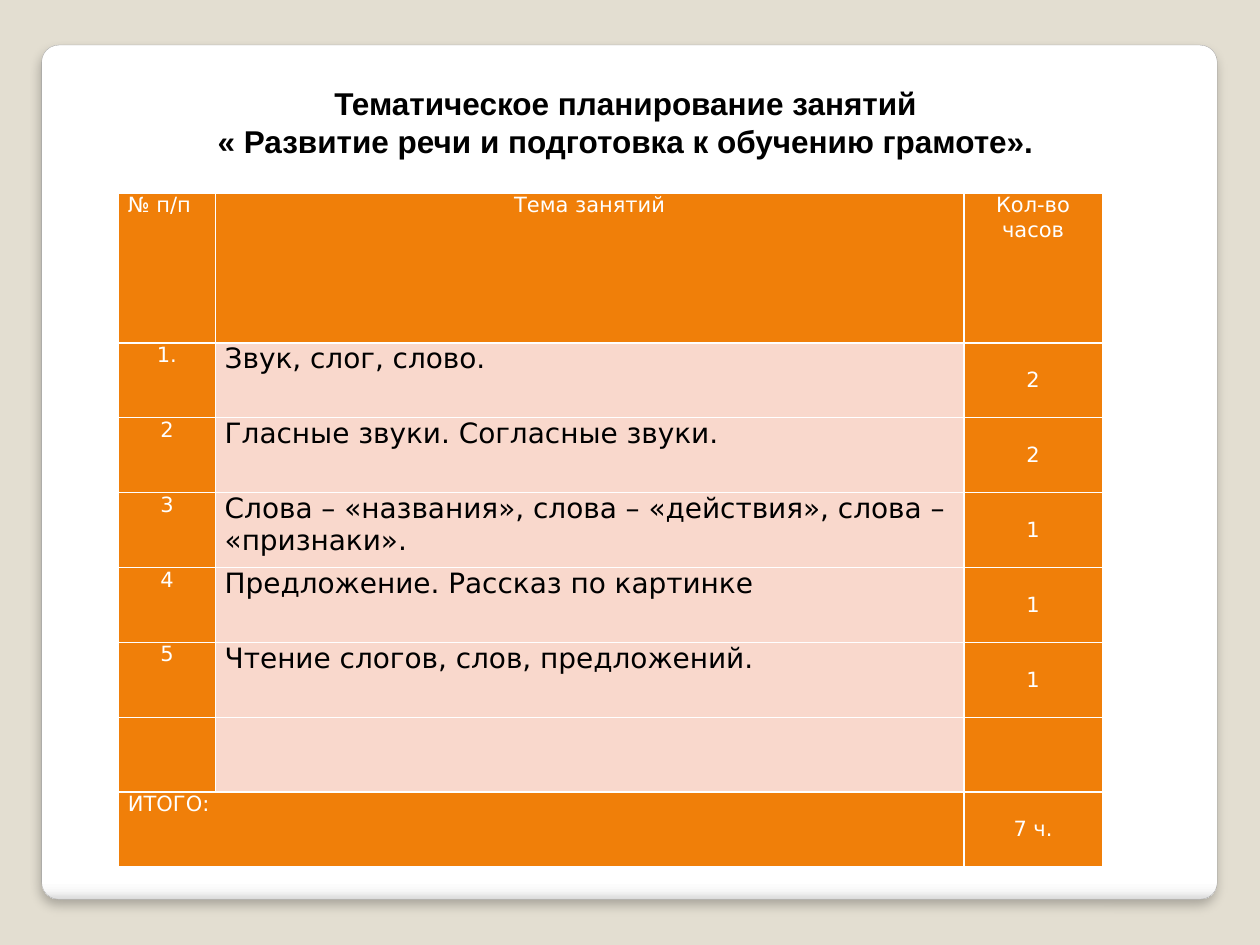
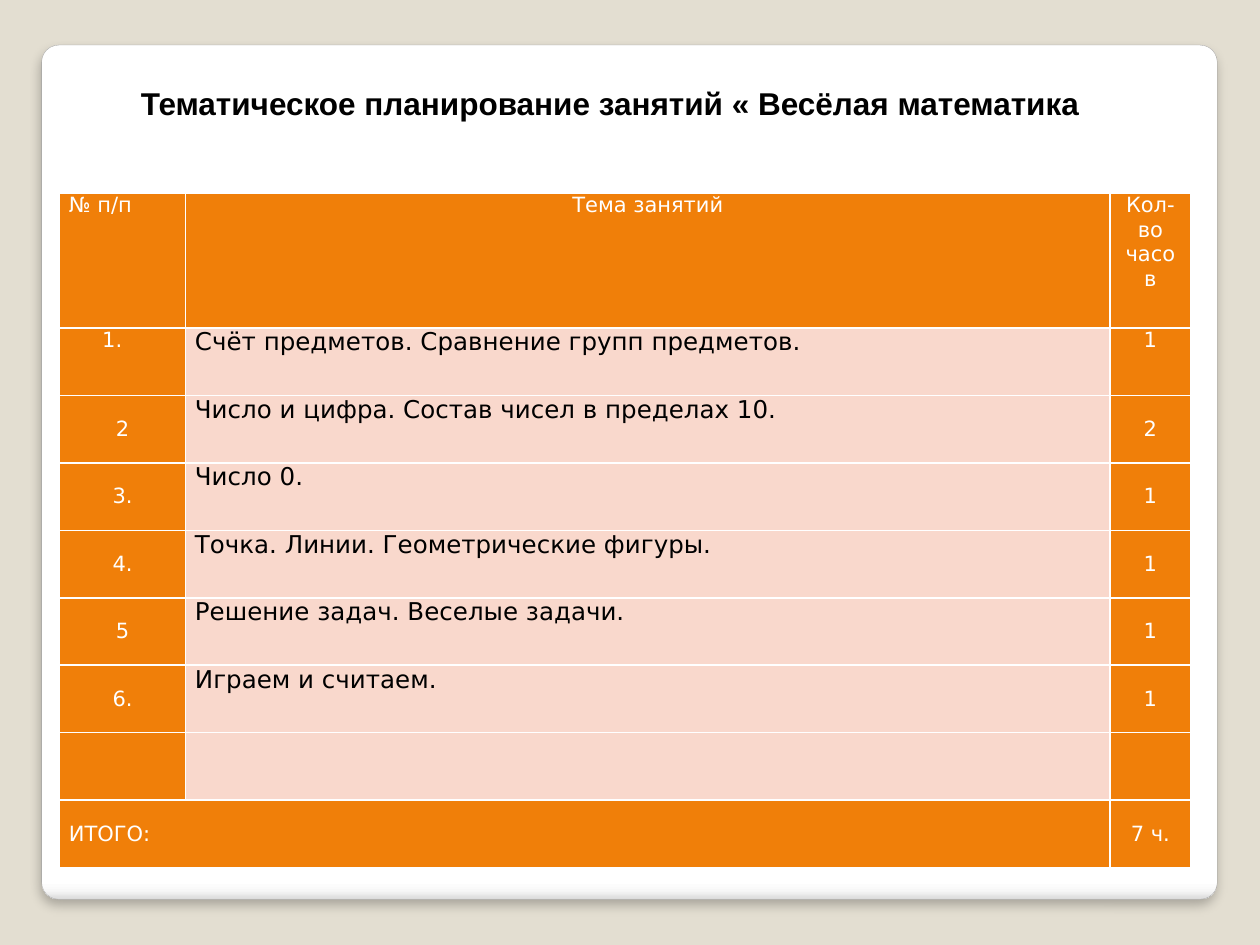
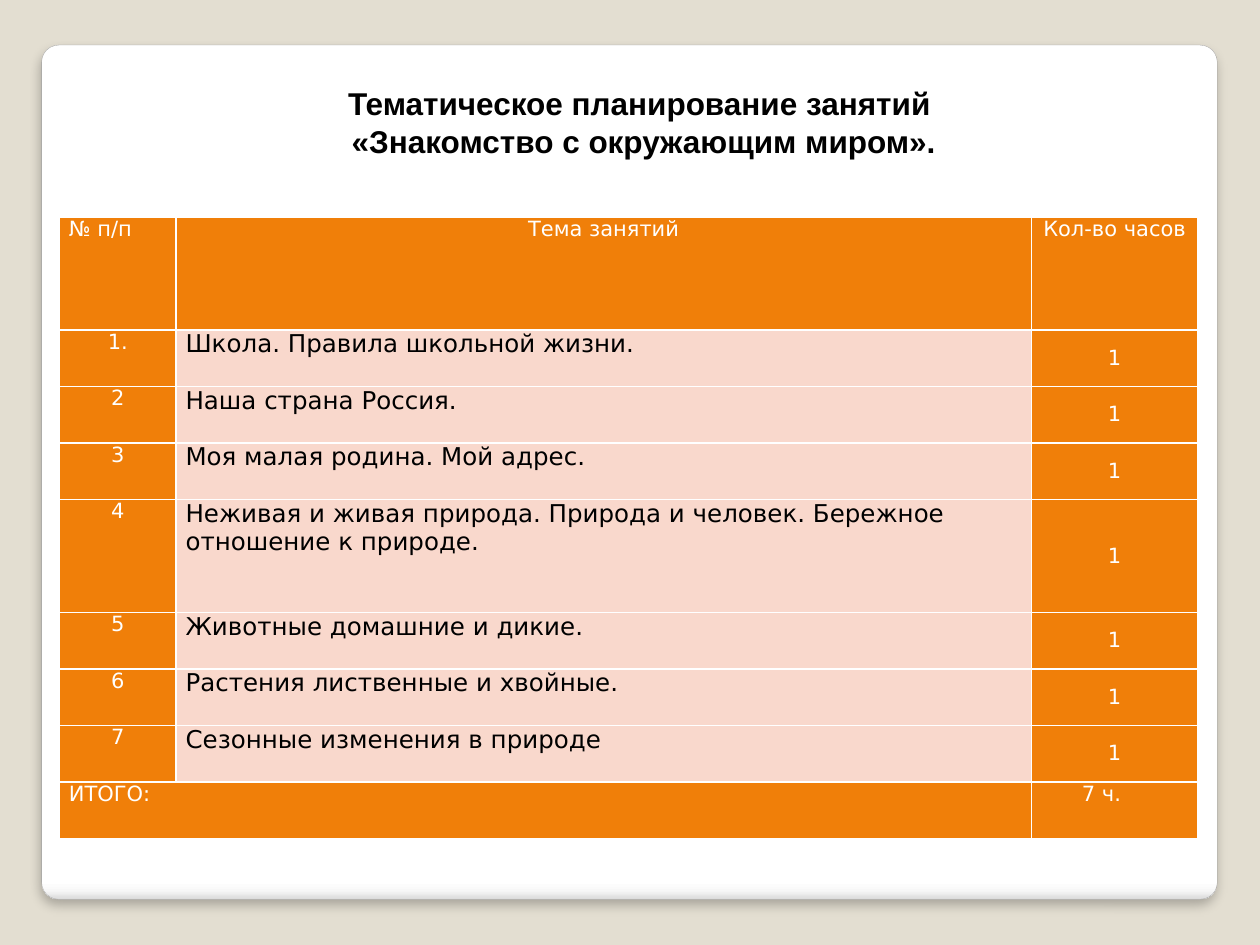
import pptx
import pptx.util
import pptx.dml.color
import pptx.enum.shapes
import pptx.enum.text
import pptx.oxml
import pptx.oxml.ns
from dataclasses import dataclass
from lxml import etree

Cm = pptx.util.Cm
ALIGN = pptx.enum.text.PP_ALIGN
ANCHOR = pptx.enum.text.MSO_ANCHOR
NAMESPACE = pptx.oxml.ns.nsdecls("a")


@dataclass(frozen=True)
class Theme:
    background: str = "E3DED1"
    accent: str = "F07F09"
    tint: str = "F9D8CC"
    light: str = "FFFFFF"
    dark: str = "000000"
    outline: str = "A4A4A4"
    panel_stops: tuple = ((0, "FFFFFF"), (98, "FFFFFF"), (99, "F7F7F7"), (100, "DADADA"))
    title_font: str = "Arial"
    table_font: str = "DejaVu Sans"
    title_size: int = 18
    label_size: int = 12


theme = Theme()


def rgb(code):
    return pptx.dml.color.RGBColor.from_string(code)


def add_run(paragraph, text, font_name, size, color, bold=False):
    run = paragraph.add_run()
    run.text = text
    run.font.name = font_name
    run.font.size = pptx.util.Pt(size)
    run.font.bold = bold
    run.font.color.rgb = rgb(color)


header = ("№ п/п", "Тема занятий", "Кол-во часов")
total = ("ИТОГО:", "", "7 ч.")
empty = ("", "", "")

plans = [
    dict(
        title=["Тематическое планирование занятий ", "« Развитие речи и подготовка к обучению грамоте». "],
        title_box=(1.98, 21.44, 1.8), title_align=ALIGN.CENTER,
        table_origin=(2.39, 3.89), columns=(1.95, 15.09, 2.79),
        row_height=1.51, double_rows={0}, topic_size=16,
        anchors="ttm", row_anchors={}, indents={},
        lessons=[
            ("1.", "Звук, слог, слово.", "2"),
            ("2", "Гласные звуки. Согласные звуки.", "2"),
            ("3", "Слова – «названия», слова – «действия», слова – «признаки».", "1"),
            ("4", "Предложение. Рассказ по картинке", "1"),
            ("5", "Чтение слогов, слов, предложений.", "1"),
            empty,
        ],
    ),
    dict(
        title=["Тематическое планирование занятий « Весёлая математика"],
        title_box=(2.59, 20.83, 1.02), title_align=ALIGN.LEFT,
        table_origin=(1.2, 3.89), columns=(2.54, 18.64, 1.62),
        row_height=1.36, double_rows={0}, topic_size=14,
        anchors="mtm", row_anchors={1: "ttt"}, indents={(1, 0): 0.67},
        lessons=[
            ("1.", "Счёт предметов. Сравнение групп предметов.", "1"),
            ("2", "Число и цифра. Состав чисел в пределах 10.", "2"),
            ("3.", "Число 0.", "1"),
            ("4.", "Точка. Линии. Геометрические фигуры.", "1"),
            ("5", "Решение задач. Веселые задачи.", "1"),
            ("6.", "Играем и считаем.", "1"),
            empty,
        ],
    ),
    dict(
        title=[" Тематическое планирование занятий ", " «Знакомство с окружающим миром»."],
        title_box=(1.98, 21.82, 1.8), title_align=ALIGN.CENTER,
        table_origin=(1.2, 4.37), columns=(2.35, 17.24, 3.36),
        row_height=1.14, double_rows={0, 4}, topic_size=14,
        anchors="ttm", row_anchors={8: "ttt"}, indents={(8, 2): 0.83},
        lessons=[
            ("1.", "Школа. Правила школьной жизни.", "1"),
            ("2", "Наша страна Россия.", "1"),
            ("3", "Моя малая родина. Мой адрес.", "1"),
            ("4", "Неживая и живая природа. Природа и человек. Бережное отношение к природе.", "1"),
            ("5", "Животные домашние и дикие.", "1"),
            ("6", "Растения лиственные и хвойные.", "1"),
            ("7", "Сезонные изменения в природе", "1"),
        ],
    ),
]

presentation = pptx.Presentation()
presentation.slide_width = Cm(25.4)
presentation.slide_height = Cm(19.05)
background = presentation.slide_master.background.fill
background.solid()
background.fore_color.rgb = rgb(theme.background)

for plan in plans:
    slide = presentation.slides.add_slide(presentation.slide_layouts[6])

    panel = slide.shapes.add_shape(
        pptx.enum.shapes.MSO_SHAPE.ROUNDED_RECTANGLE, Cm(0.84), Cm(0.91), Cm(23.7), Cm(17.22))
    panel.adjustments[0] = 0.02
    panel.line.color.rgb = rgb(theme.outline)
    panel.line.width = pptx.util.Pt(0.16)
    panel.fill.gradient()
    panel.fill.gradient_angle = 270
    properties = panel.element.spPr
    stops = properties.find(".//" + pptx.oxml.ns.qn("a:gsLst"))
    stops.clear()
    for position, color in theme.panel_stops:
        stop = etree.SubElement(stops, pptx.oxml.ns.qn("a:gs"), pos=str(position * 1000))
        etree.SubElement(stop, pptx.oxml.ns.qn("a:srgbClr"), val=color)
    panel.shadow.inherit = False
    properties.find(pptx.oxml.ns.qn("a:effectLst")).append(pptx.oxml.parse_xml(
        f'<a:outerShdw {NAMESPACE} blurRad="76200" dist="50800" dir="5400000" algn="tl" rotWithShape="0">'
        f'<a:srgbClr val="{theme.dark}"><a:alpha val="25000"/></a:srgbClr></a:outerShdw>'))

    left, width, height = plan["title_box"]
    title_frame = slide.shapes.add_textbox(Cm(left), Cm(1.57), Cm(width), Cm(height)).text_frame
    title_frame.word_wrap = True
    title_frame.auto_size = pptx.enum.text.MSO_AUTO_SIZE.SHAPE_TO_FIT_TEXT
    for index, line in enumerate(plan["title"]):
        paragraph = title_frame.add_paragraph() if index else title_frame.paragraphs[0]
        paragraph.alignment = plan["title_align"]
        add_run(paragraph, line, theme.title_font, theme.title_size, theme.dark, True)

    rows = [header, *plan["lessons"], total]
    last_row = len(rows) - 1
    heights = [plan["row_height"] * (2 if row in plan["double_rows"] else 1) for row in range(len(rows))]
    left, top = plan["table_origin"]
    table = slide.shapes.add_table(
        len(rows), len(header), Cm(left), Cm(top), Cm(sum(plan["columns"])), Cm(sum(heights))).table
    table.first_row = False
    table.horz_banding = False
    for column, width in zip(table.columns, plan["columns"]):
        column.width = Cm(width)
    for table_row, height in zip(table.rows, heights):
        table_row.height = Cm(height)
    table.cell(last_row, 0).merge(table.cell(last_row, 1))

    for row, texts in enumerate(rows):
        anchors = "ttt" if row == 0 else plan["row_anchors"].get(row, plan["anchors"])
        for column, text in enumerate(texts):
            cell = table.cell(row, column)
            is_topic = column == 1 and 0 < row < last_row
            cell.margin_left = cell.margin_right = Cm(0.19)
            cell.margin_top = cell.margin_bottom = 0
            cell.vertical_anchor = ANCHOR.MIDDLE if anchors[column] == "m" else ANCHOR.TOP
            cell.fill.solid()
            cell.fill.fore_color.rgb = rgb(theme.tint if is_topic else theme.accent)
            cell_properties = cell._tc.get_or_add_tcPr()
            for index, side in enumerate("LRTB"):
                cell_properties.insert(index, pptx.oxml.parse_xml(
                    f'<a:ln{side} {NAMESPACE} w="12700"><a:solidFill>'
                    f'<a:srgbClr val="{theme.light}"/></a:solidFill></a:ln{side}>'))
            if not text:
                continue
            paragraph = cell.text_frame.paragraphs[0]
            indent = plan["indents"].get((row, column))
            is_left = is_topic or indent or (column == 0 and row in (0, last_row))
            paragraph.alignment = ALIGN.LEFT if is_left else ALIGN.CENTER
            if indent:
                paragraph._p.get_or_add_pPr().set("marL", str(Cm(indent)))
            add_run(paragraph, text, theme.table_font,
                    plan["topic_size"] if is_topic else theme.label_size,
                    theme.dark if is_topic else theme.light)

presentation.save("out.pptx")
